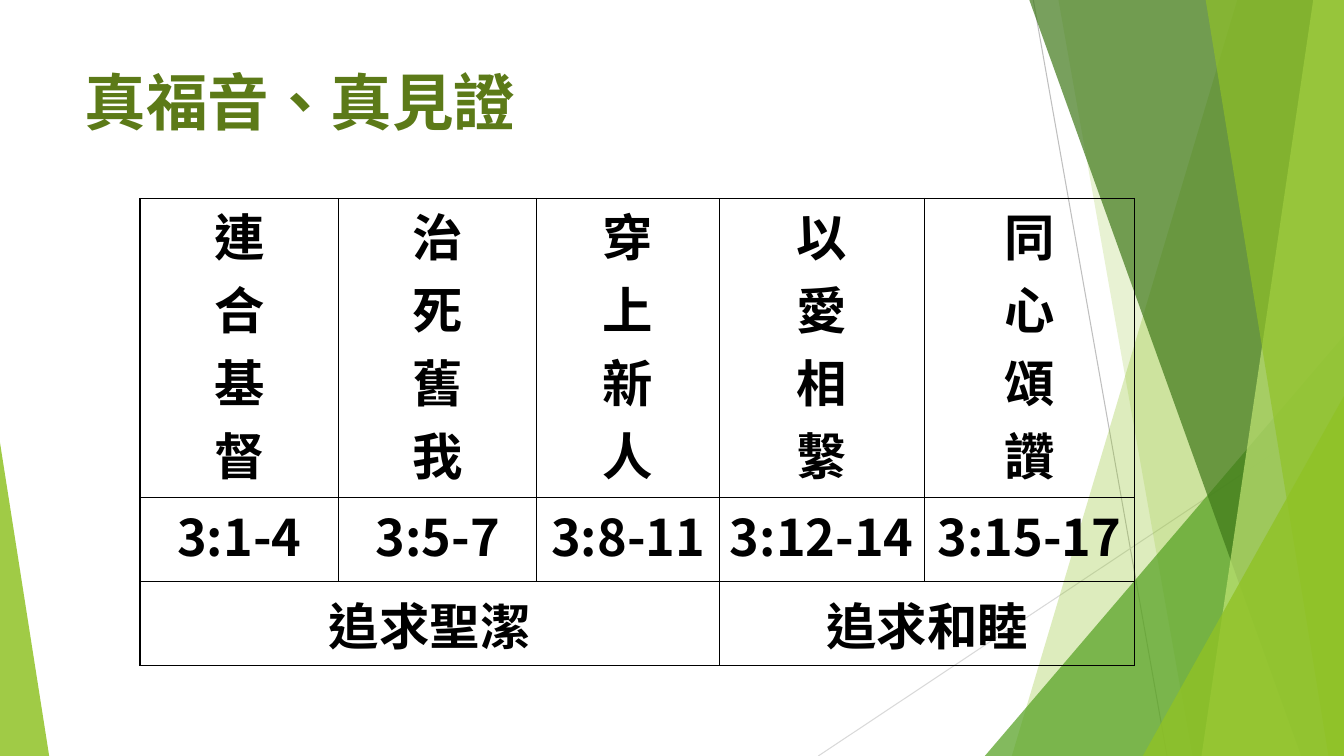
from lxml.etree import SubElement
from pptx import Presentation
from pptx.dml.color import RGBColor
from pptx.enum.shapes import MSO_CONNECTOR, MSO_SHAPE
from pptx.enum.text import MSO_ANCHOR, PP_ALIGN
from pptx.oxml import parse_xml
from pptx.oxml.ns import nsdecls, qn
from pptx.util import Cm, Pt

# Content; lengths in centimetres
WIDTH, HEIGHT = 33.87, 19.05
BAND_TOP = -0.03
CJK_FONT = "Noto Sans CJK SC"

TITLE = "真福音、真見證"
COLUMNS = [  # heading, verses, width
    ("連合基督", "3:1-4", 5.0),
    ("治死舊我", "3:5-7", 5.0),
    ("穿上新人", "3:8-11", 4.6),
    ("以愛相繫", "3:12-14", 5.16),
    ("同心頌讚", "3:15-17", 5.31),
]
GOALS = [("追求聖潔", 0, 2), ("追求和睦", 3, 4)]  # text, first and last column
ROW_HEIGHTS = [7.54, 2.11, 2.11]
TABLE_LEFT, TABLE_TOP = 3.53, 5.0

RAYS = [  # from, to, colour
    ((26.04, 0), (29.41, HEIGHT), "BFBFBF"),
    ((WIDTH, 10.24), (20.62, HEIGHT), "D9D9D9"),
]
DECOR = [  # kind, measures, colour, opacity in percent
    ("band", (31.19, 25.5), "90C226", 30),  # left edge at top, at bottom
    ("band", (26.67, 30.05), "90C226", 20),
    ("triangle", (24.82, 8.46, WIDTH, 1), "54A021", 72),  # left, top, right, apex
    ("band", (25.93, 32.79), "3F7819", 70),
    ("band", (33.1, 30.28), "C0E474", 70),
    ("band", (30.38, 33.48), "90C226", 65),
    ("triangle", (28.8, 9.98, WIDTH, 1), "90C226", 80),
    ("triangle", (0, 11.15, 1.24, 0), "90C226", 85),
]


def rgb(value):
    return RGBColor.from_string(value)


def add_ray(shapes, start, end, color):
    line = shapes.add_connector(MSO_CONNECTOR.STRAIGHT, *map(Cm, start + end))
    line.line.color.rgb = rgb(color)
    line.line.width = Pt(0.75)
    SubElement(line._element.spPr, qn("a:effectLst"))


def add_band(shapes, top_x, bottom_x):
    """Add a slanted band that runs to the right edge of the slide."""
    builder = shapes.build_freeform(Cm(top_x), Cm(BAND_TOP))
    corners = [(WIDTH, BAND_TOP), (WIDTH, HEIGHT), (bottom_x, HEIGHT)]
    builder.add_line_segments([(Cm(x), Cm(y)) for x, y in corners], close=True)
    return builder.convert_to_shape()


def add_triangle(shapes, left, top, right, apex):
    """Add a triangle that stands on the bottom edge of the slide."""
    sp = shapes.add_shape(MSO_SHAPE.ISOSCELES_TRIANGLE, Cm(left), Cm(top),
                          Cm(right - left), Cm(HEIGHT - top))
    sp.adjustments[0] = apex
    return sp


def paint(sp, color, opacity):
    sp.shadow.inherit = False
    sp.line.fill.background()
    sp.fill.solid()
    sp.fill.fore_color.rgb = rgb(color)
    clr = sp._element.spPr.find(qn("a:solidFill")).find(qn("a:srgbClr"))
    SubElement(clr, qn("a:alpha"), val=str(opacity * 1000))


def format_text(p, size, color, font):
    for r in p.runs:
        r.font.size = Pt(size)
        r.font.bold = True
        r.font.name = font
        r.font.color.rgb = rgb(color)
        rPr = r._r.get_or_add_rPr()
        rPr.set("lang", "zh-TW")
        SubElement(rPr, qn("a:ea"), typeface=CJK_FONT)


def style_cell(cell):
    """Clear the fill and draw a thin black border on every side."""
    cell.margin_left = cell.margin_right = Cm(0.18)
    cell.margin_top = cell.margin_bottom = 0
    cell.fill.background()
    tcPr = cell._tc.get_or_add_tcPr()
    for i, side in enumerate("LRTB"):
        tcPr.insert(i, parse_xml(
            f'<a:ln{side} {nsdecls("a")} w="12700"><a:solidFill>'
            f'<a:srgbClr val="000000"/></a:solidFill></a:ln{side}>'))


def fill_cell(cell, text):
    cell.text_frame.text = text
    for p in cell.text_frame.paragraphs:
        p.alignment = PP_ALIGN.CENTER
        format_text(p, 36, "000000", CJK_FONT)


def add_title(shapes):
    tf = shapes.add_textbox(Cm(1.88), Cm(1.7), Cm(23.88), Cm(3.66)).text_frame
    tf.word_wrap = True
    tf.text = TITLE
    p = tf.paragraphs[0]
    p.line_spacing = 0.9
    format_text(p, 44, "5C7A18", "Karla")


def add_verse_table(shapes):
    widths = [width for _, _, width in COLUMNS]
    table = shapes.add_table(len(ROW_HEIGHTS), len(COLUMNS), Cm(TABLE_LEFT), Cm(TABLE_TOP),
                             Cm(sum(widths)), Cm(sum(ROW_HEIGHTS))).table
    table.first_row = table.horz_banding = False
    for row, height in zip(table.rows, ROW_HEIGHTS):
        row.height = Cm(height)
    for column, width in zip(table.columns, widths):
        column.width = Cm(width)
    for cell in table.iter_cells():
        style_cell(cell)
    for i, (heading, verses, _) in enumerate(COLUMNS):
        fill_cell(table.cell(0, i), "\n".join(heading))
        fill_cell(table.cell(1, i), verses)
    for goal, first, last in GOALS:
        cell = table.cell(2, first)
        cell.merge(table.cell(2, last))
        cell.vertical_anchor = MSO_ANCHOR.MIDDLE
        fill_cell(cell, goal)


def main():
    prs = Presentation()
    prs.slide_width, prs.slide_height = Cm(WIDTH), Cm(HEIGHT)
    shapes = prs.slides.add_slide(prs.slide_layouts[6]).shapes
    for ray in RAYS:
        add_ray(shapes, *ray)
    adders = {"band": add_band, "triangle": add_triangle}
    for kind, measures, color, opacity in DECOR:
        paint(adders[kind](shapes, *measures), color, opacity)
    add_title(shapes)
    add_verse_table(shapes)
    prs.save("out.pptx")


if __name__ == "__main__":
    main()
